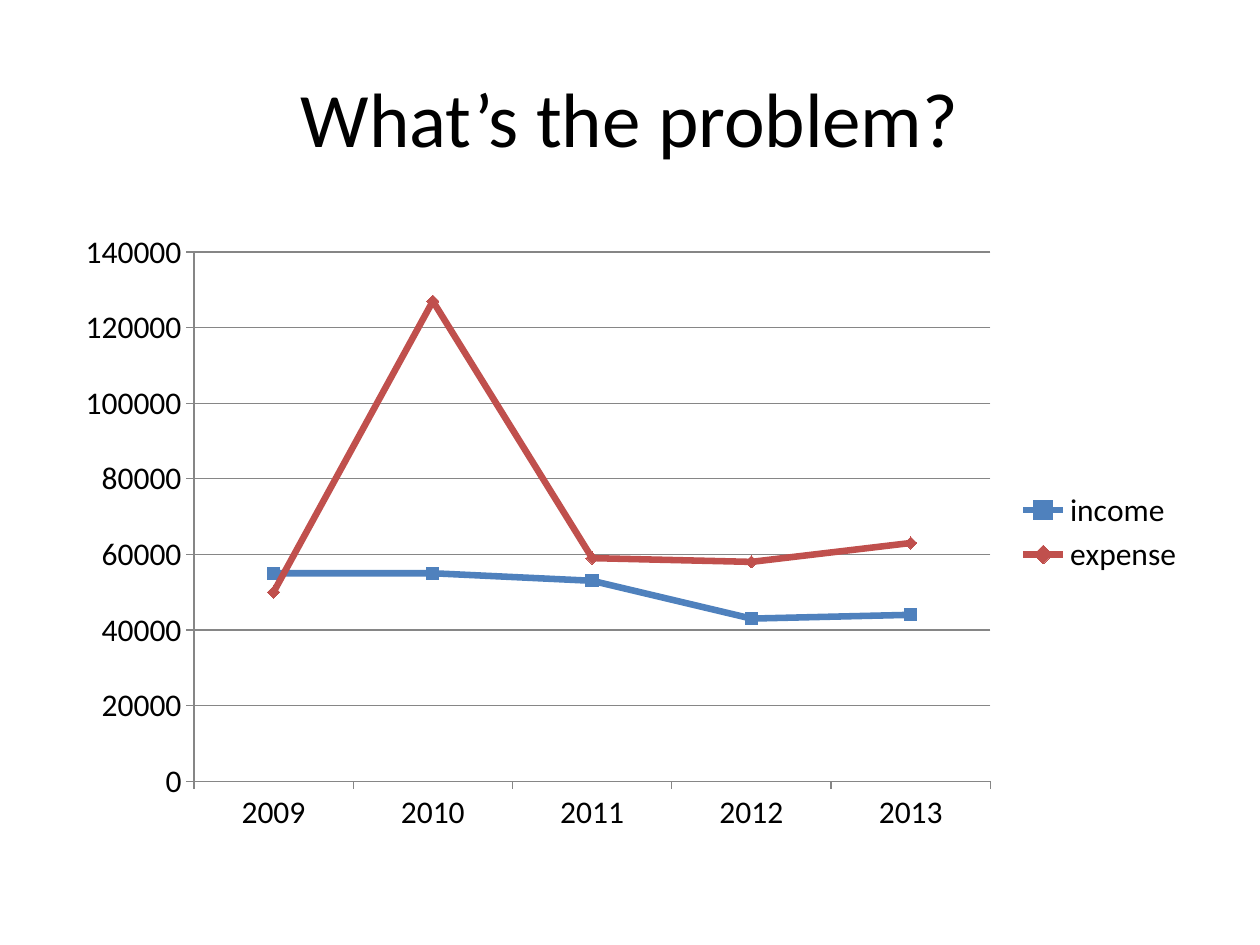
import pptx
import pptx.chart.data
import pptx.dml.color
import pptx.enum.chart
import pptx.enum.text
import pptx.util

WIDE = pptx.util.Inches(10)
HIGH = pptx.util.Inches(7.5)
YEARS = ["2009", "2010", "2011", "2012", "2013"]
SQUARE = pptx.enum.chart.XL_MARKER_STYLE.SQUARE
DIAMOND = pptx.enum.chart.XL_MARKER_STYLE.DIAMOND
LINES = [
    ("income", [55000, 55000, 53000, 43000, 44000], "4F81BD", SQUARE),
    ("expense", [50000, 127000, 59000, 58000, 63000], "C0504D", DIAMOND),
]


def paint(fill, code):
    fill.solid()
    fill.fore_color.rgb = pptx.dml.color.RGBColor.from_string(code)


def style(font, size):
    font.name = "Calibri"
    font.size = pptx.util.Pt(size)
    paint(font.fill, "000000")


def box(left, top, width, height):
    return (int(left * WIDE), int(top * HIGH),
            int(width * WIDE), int(height * HIGH))


def add_title(slide, text, area):
    frame = slide.shapes.add_textbox(*area).text_frame
    frame.word_wrap = True
    frame.vertical_anchor = pptx.enum.text.MSO_ANCHOR.MIDDLE
    para = frame.paragraphs[0]
    para.text = text
    para.alignment = pptx.enum.text.PP_ALIGN.CENTER
    style(para.font, 44)


def set_line(line, code, width):
    paint(line.fill, code)
    line.width = pptx.util.Pt(width)


def set_series(series, code, mark):
    series.smooth = False
    set_line(series.format.line, code, 3.75)
    series.marker.style = mark
    series.marker.size = 7
    paint(series.marker.format.fill, code)
    set_line(series.marker.format.line, code, 0.75)


def set_axes(chart):
    for axis in (chart.category_axis, chart.value_axis):
        axis.major_tick_mark = pptx.enum.chart.XL_TICK_MARK.OUTSIDE
        axis.minor_tick_mark = pptx.enum.chart.XL_TICK_MARK.NONE
        set_line(axis.format.line, "868686", 0.75)
    value = chart.value_axis
    value.minimum_scale = 0
    value.maximum_scale = 140000
    value.major_unit = 20000
    value.has_major_gridlines = True
    set_line(value.major_gridlines.format.line, "868686", 0.75)


def add_chart(slide, area):
    data = pptx.chart.data.CategoryChartData(number_format="General")
    data.categories = YEARS
    for name, vals, _, _ in LINES:
        data.add_series(name, vals)
    kind = pptx.enum.chart.XL_CHART_TYPE.LINE_MARKERS
    chart = slide.shapes.add_chart(kind, *area, data).chart
    chart.has_title = False
    style(chart.font, 18)
    chart.has_legend = True
    chart.legend.position = pptx.enum.chart.XL_LEGEND_POSITION.RIGHT
    chart.legend.include_in_layout = False
    chart.plots[0].vary_by_categories = False
    set_axes(chart)
    for series, (_, _, code, mark) in zip(chart.plots[0].series, LINES):
        set_series(series, code, mark)


def main():
    deck = pptx.Presentation()
    deck.slide_width = WIDE
    deck.slide_height = HIGH
    slide = deck.slides.add_slide(deck.slide_layouts[6])
    add_title(slide, "What’s the problem?", box(0.05, 0.04, 0.9, 1 / 6))
    add_chart(slide, box(0.05, 7 / 30, 0.9, 0.66))
    deck.save("out.pptx")


if __name__ == "__main__":
    main()
